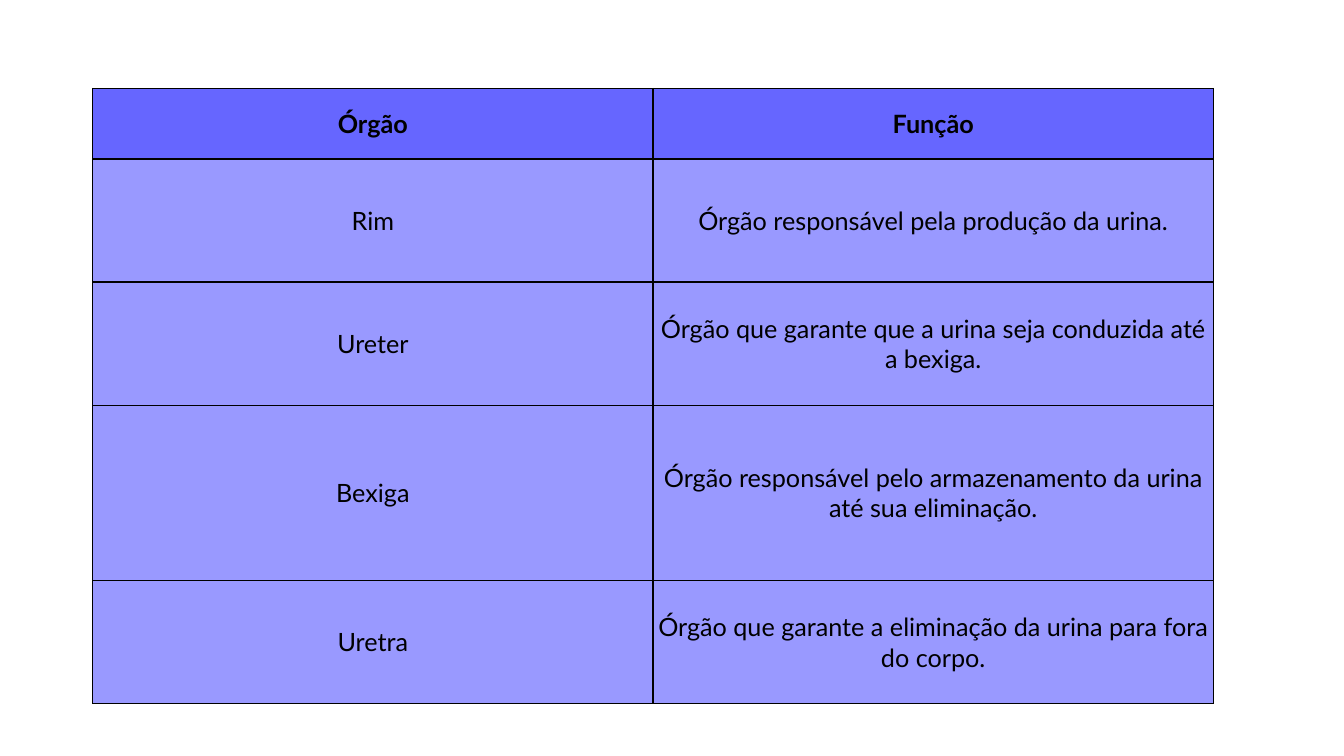
from lxml.etree import SubElement
from pptx import Presentation
from pptx.dml.color import RGBColor
from pptx.enum.text import MSO_ANCHOR, PP_ALIGN
from pptx.oxml.ns import qn
from pptx.util import Pt

ORGANS = [
    ("Órgão", "Função"),
    ("Rim", "Órgão responsável pela produção da urina."),
    ("Ureter", "Órgão que garante que a urina seja conduzida até a bexiga."),
    ("Bexiga", "Órgão responsável pelo armazenamento da urina até sua eliminação."),
    ("Uretra", "Órgão que garante a eliminação da urina para fora do corpo."),
]
ROW_HEIGHTS = [50.4, 87.9, 87.9, 125.4, 87.9]
COLUMN_WIDTH = 400.3


def color(code):
    return RGBColor.from_string(code)


class OrganSlide:
    """Style of the slide and the slide itself."""

    header_fill = "6666FF"
    body_fill = "9999FF"
    ink = "000000"
    font = {"name": "Lato", "size": Pt(18)}
    cell = {"vertical_anchor": MSO_ANCHOR.MIDDLE}
    cell |= {f"margin_{side}": Pt(3.6) for side in ("left", "right", "top", "bottom")}

    def __init__(self, presentation):
        self.slide = presentation.slides.add_slide(presentation.slide_layouts[6])

    def apply(self, target, values):
        for attribute, value in values.items():
            setattr(target, attribute, value)

    def borders(self, cell):
        properties = cell._tc.get_or_add_tcPr()
        for edge in ("a:lnL", "a:lnR", "a:lnT", "a:lnB"):
            line = SubElement(properties, qn(edge), w=str(Pt(1)))
            fill = SubElement(line, qn("a:solidFill"))
            SubElement(fill, qn("a:srgbClr"), val=self.ink)

    def fill_cell(self, cell, wording, is_header):
        self.apply(cell, self.cell)
        self.borders(cell)
        cell.fill.solid()
        cell.fill.fore_color.rgb = color(self.header_fill if is_header else self.body_fill)
        cell.text = wording
        paragraph = cell.text_frame.paragraphs[0]
        paragraph.alignment = PP_ALIGN.CENTER
        font = paragraph.runs[0].font
        self.apply(font, self.font | {"bold": is_header})
        font.color.rgb = color(self.ink)

    def table(self, left, top, rows, heights, column_width):
        columns = len(rows[0])
        table = self.slide.shapes.add_table(
            len(rows), columns, Pt(left), Pt(top),
            Pt(column_width * columns), Pt(sum(heights)),
        ).table
        for column in table.columns:
            column.width = Pt(column_width)
        for index, (wordings, height) in enumerate(zip(rows, heights)):
            table.rows[index].height = Pt(height)
            for position, wording in enumerate(wordings):
                self.fill_cell(table.cell(index, position), wording, index == 0)


def main():
    presentation = Presentation()
    presentation.slide_width, presentation.slide_height = Pt(960), Pt(540)

    # Organs of the urinary system and their functions
    organs = OrganSlide(presentation)
    organs.table(66.2, 63.2, ORGANS, ROW_HEIGHTS, COLUMN_WIDTH)

    presentation.save("out.pptx")


if __name__ == "__main__":
    main()
